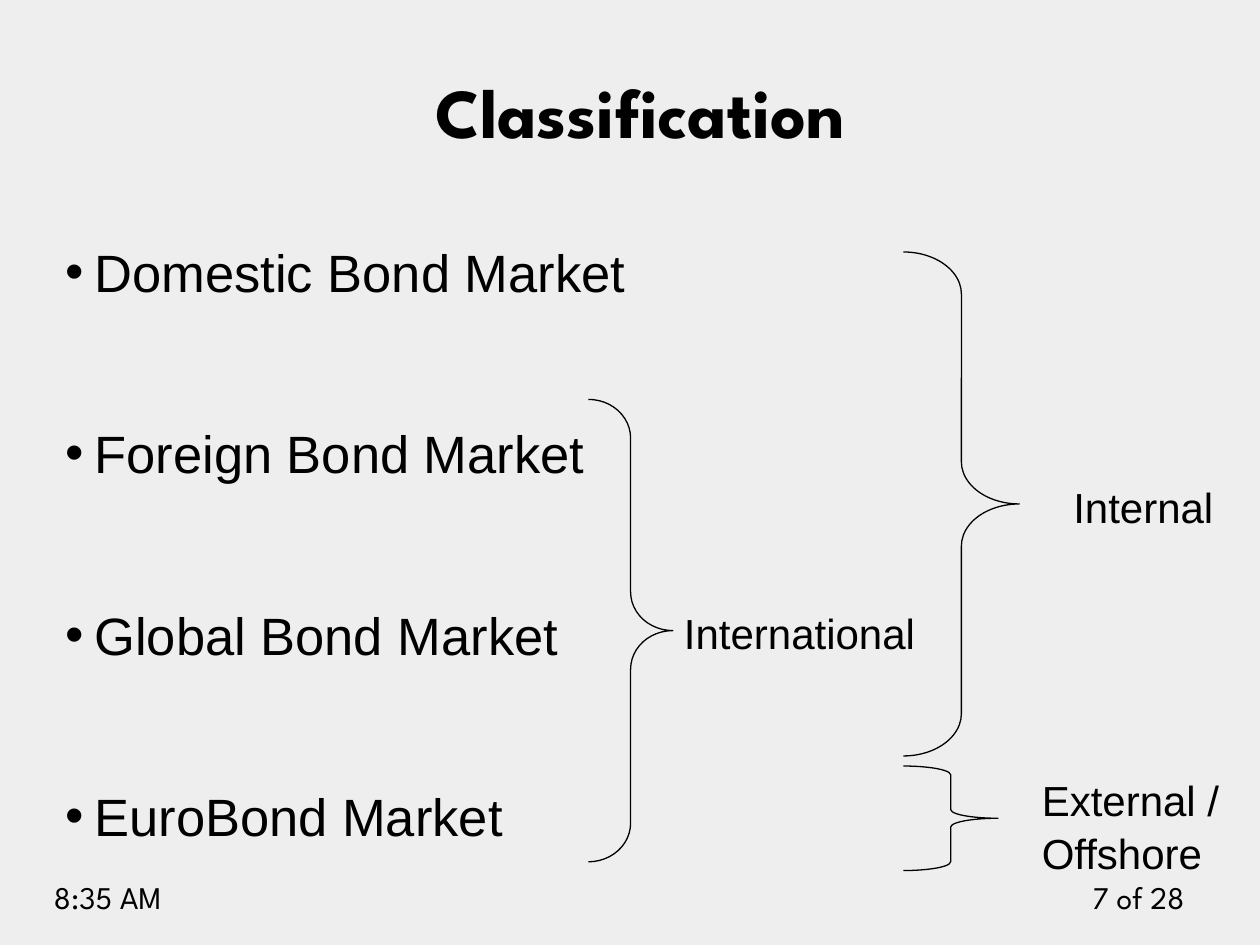
from dataclasses import dataclass

from lxml import etree
from pptx import Presentation
from pptx.dml.color import RGBColor
from pptx.enum.shapes import MSO_SHAPE
from pptx.enum.text import MSO_ANCHOR, MSO_AUTO_SIZE, PP_ALIGN
from pptx.oxml.ns import qn
from pptx.util import Inches, Pt

BRACE = MSO_SHAPE.RIGHT_BRACE
TOP, MIDDLE = MSO_ANCHOR.TOP, MSO_ANCHOR.MIDDLE
LEFT, CENTER, RIGHT = PP_ALIGN.LEFT, PP_ALIGN.CENTER, PP_ALIGN.RIGHT
FIXED = MSO_AUTO_SIZE.NONE


@dataclass(frozen=True)
class Theme:
    ink: RGBColor = RGBColor(0, 0, 0)
    paper: RGBColor = RGBColor(0xEE, 0xEE, 0xEE)
    head: str = "League Spartan"
    text: str = "Arial"
    title: Pt = Pt(40)
    list: Pt = Pt(30)
    label: Pt = Pt(24)
    foot: Pt = Pt(18)
    rule: Pt = Pt(0.75)
    gap: Pt = Pt(65.8)
    lead: float = 1.05


THEME = Theme()

MARKETS = ["Domestic Bond Market", "Foreign Bond Market",
           "Global Bond Market", "EuroBond Market"]

# Brace box, curve, label box, label
GROUPS = [
    ((4.67, 3.17, 0.67, 3.67), 0.458, (5.33, 4.75, 2.17, 0.5), "International"),
    ((7.17, 2, 0.92, 4), 0.364, (8.42, 3.75, 1.58, 0.5), "Internal"),
    ((7.17, 6.08, 0.75, 0.83), 0.093, (8.17, 6.08, 1.83, 0.9),
     "External / Offshore"),
]


def assign(item, values):
    for name, value in values.items():
        setattr(item, name, value)


def place(shape, box):
    sides = ("left", "top", "width", "height")
    assign(shape, dict(zip(sides, map(Inches, box))))


def write(shape, lines, face, size, align=LEFT, anchor=TOP, bold=False,
          lead=1.0, bullet=False):
    frame = shape.text_frame
    assign(frame, {"word_wrap": True, "auto_size": FIXED,
                   "vertical_anchor": anchor})
    frame.text = "\n".join(lines)
    for i, para in enumerate(frame.paragraphs):
        assign(para, {"alignment": align, "line_spacing": lead,
                      "space_before": THEME.gap if i else Pt(0)})
        if bullet:
            props = para._p.get_or_add_pPr()
            props.set("marL", str(Inches(0.23)))
            props.set("indent", str(-Inches(0.23)))
            etree.SubElement(props, qn("a:buChar")).set("char", "•")
        assign(para.font, {"name": face, "size": size, "bold": bold})
        para.font.color.rgb = THEME.ink


def add_text(slide, box, text, face, size, **style):
    shape = slide.shapes.add_textbox(*map(Inches, box))
    write(shape, [text], face, size, **style)


def add_title(slide, box, text):
    shape = slide.shapes.title
    place(shape, box)
    write(shape, [text], THEME.head, THEME.title, align=CENTER,
          anchor=MIDDLE, bold=True)


def add_list(slide, box, lines):
    shape = slide.placeholders[1]
    place(shape, box)
    write(shape, lines, THEME.text, THEME.list, lead=THEME.lead, bullet=True)


def add_group(slide, box, curve, spot, text):
    brace = slide.shapes.add_shape(BRACE, *map(Inches, box))
    brace.adjustments[0] = curve
    brace.shadow.inherit = False
    brace.fill.background()
    brace.line.color.rgb = THEME.ink
    brace.line.width = THEME.rule
    add_text(slide, spot, text, THEME.text, THEME.label, lead=THEME.lead)


def add_foot(slide, box, time, page):
    left, top, width, height = box
    wide = 1.17
    add_text(slide, (left, top, 1.58, height), time, THEME.head, THEME.foot)
    add_text(slide, (left + width - wide, top, wide, height), page,
             THEME.head, THEME.foot, align=RIGHT)


def main():
    deck = Presentation()
    assign(deck, {"slide_width": Inches(10), "slide_height": Inches(7.5)})
    slide = deck.slides.add_slide(deck.slide_layouts[1])
    fill = slide.background.fill
    fill.solid()
    fill.fore_color.rgb = THEME.paper

    # Heading and markets
    add_title(slide, (0.83, 0.25, 8.5, 1.25), "Classification")
    add_list(slide, (0.42, 1.83, 9.08, 5.1), MARKETS)

    # Braces with their labels
    for group in GROUPS:
        add_group(slide, *group)

    # Time and page
    add_foot(slide, (0.33, 6.92, 9.17, 0.4), "8:35 AM", "7 of 28")
    deck.save("out.pptx")


if __name__ == "__main__":
    main()
